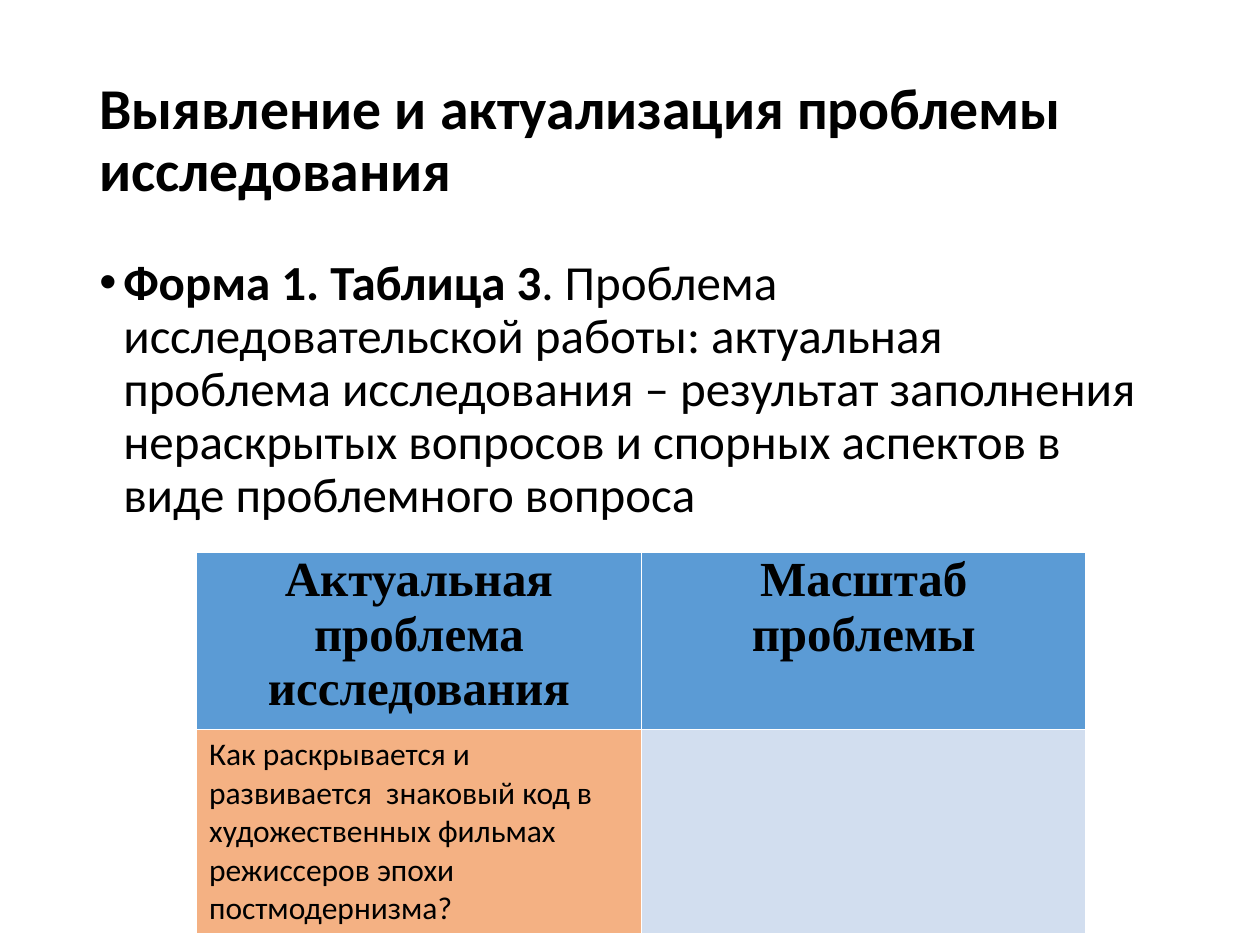
from lxml import etree
from pptx import Presentation
from pptx.dml.color import RGBColor
from pptx.enum.text import MSO_ANCHOR, PP_ALIGN
from pptx.oxml.ns import qn
from pptx.util import Inches, Pt

LEFT, CENTER = PP_ALIGN.LEFT, PP_ALIGN.CENTER
MIDDLE, TOP = MSO_ANCHOR.MIDDLE, MSO_ANCHOR.TOP
TITLE_ONLY = 5
COLORS = {
    "text": "000000",
    "border": "FFFFFF",
    "header": "5B9BD5",
    "question": "F4B183",
    "scale": "D2DEEF",
}
TITLE = "Выявление и актуализация проблемы исследования"
FORM_LABEL = "Форма 1. Таблица 3"
FORM_TEXT = (
    ". Проблема исследовательской работы: актуальная проблема исследования – "
    "результат заполнения нераскрытых вопросов и спорных аспектов в виде "
    "проблемного вопроса"
)
HEADERS = ["Актуальная проблема исследования", "Масштаб проблемы"]
ANSWERS = [
    "Как раскрывается и развивается  знаковый код в художественных фильмах "
    "режиссеров эпохи постмодернизма?",
    "",
]
ROW_HEIGHTS = [1.3, 1.62]


def place(shape, box):
    """Move a shape to a box given in inches."""
    shape.left, shape.top, shape.width, shape.height = map(Inches, box)


def format_run(run, size, bold=False, name="Calibri"):
    """Apply font, size, weight and text colour to a run."""
    font = run.font
    font.name, font.size, font.bold = name, Pt(size), bold
    font.color.rgb = RGBColor.from_string(COLORS["text"])


def add_title(slide, box):
    """Fill the title placeholder inside the box."""
    title = slide.shapes.title
    place(title, box)
    frame = title.text_frame
    frame.text = TITLE
    frame.vertical_anchor = MIDDLE
    paragraph = frame.paragraphs[0]
    paragraph.alignment = LEFT
    paragraph.line_spacing = 0.9
    format_run(paragraph.runs[0], 33, bold=True)


def add_description(slide, box):
    """Add the bulleted description of the form inside the box."""
    frame = slide.shapes.add_textbox(*map(Inches, box)).text_frame
    frame.word_wrap = True
    frame.vertical_anchor = TOP
    paragraph = frame.paragraphs[0]
    paragraph.line_spacing = 0.9
    paragraph.space_before = Pt(7.5)
    for text, bold in ((FORM_LABEL, True), (FORM_TEXT, False)):
        run = paragraph.add_run()
        run.text = text
        format_run(run, 28, bold)
    properties = paragraph._p.get_or_add_pPr()
    properties.set("marL", str(Inches(0.19)))
    properties.set("indent", str(-Inches(0.19)))
    etree.SubElement(properties, qn("a:buFont"), typeface="Arial")
    etree.SubElement(properties, qn("a:buChar"), char="•")


def style_cell(cell, color):
    """Give a cell thin borders and a solid fill."""
    properties = cell._tc.get_or_add_tcPr()
    for side in "LRTB":
        line = etree.SubElement(properties, qn(f"a:ln{side}"), w=str(Pt(1)))
        fill = etree.SubElement(line, qn("a:solidFill"))
        etree.SubElement(fill, qn("a:srgbClr"), val=COLORS["border"])
    cell.fill.solid()
    cell.fill.fore_color.rgb = RGBColor.from_string(COLORS[color])


def add_problem_table(slide, box):
    """Add the two-column table of the research problem inside the box."""
    table = slide.shapes.add_table(2, len(HEADERS), *map(Inches, box)).table
    for row, height in zip(table.rows, ROW_HEIGHTS):
        row.height = Inches(height)
    for column, text in enumerate(HEADERS):
        cell = table.cell(0, column)
        cell.margin_left = cell.margin_right = cell.margin_top = Inches(0.01)
        cell.margin_bottom = 0
        cell.text = text
        paragraph = cell.text_frame.paragraphs[0]
        paragraph.alignment = CENTER
        format_run(paragraph.runs[0], 28, bold=True, name="Times New Roman")
        style_cell(cell, "header")
    for column, (text, color) in enumerate(zip(ANSWERS, ("question", "scale"))):
        cell = table.cell(1, column)
        if text:
            cell.text = text
            format_run(cell.text_frame.paragraphs[0].runs[0], 18)
        style_cell(cell, color)


def main():
    """Build the slide and save the presentation."""
    presentation = Presentation()
    presentation.slide_width, presentation.slide_height = Inches(10), Inches(7.5)
    slide = presentation.slides.add_slide(presentation.slide_layouts[TITLE_ONLY])
    add_title(slide, (0.69, 0.4, 8.62, 1.45))
    add_description(slide, (0.69, 2, 8.62, 4.76))
    add_problem_table(slide, (1.56, 4.38, 7.06, sum(ROW_HEIGHTS)))
    presentation.save("out.pptx")


if __name__ == "__main__":
    main()
